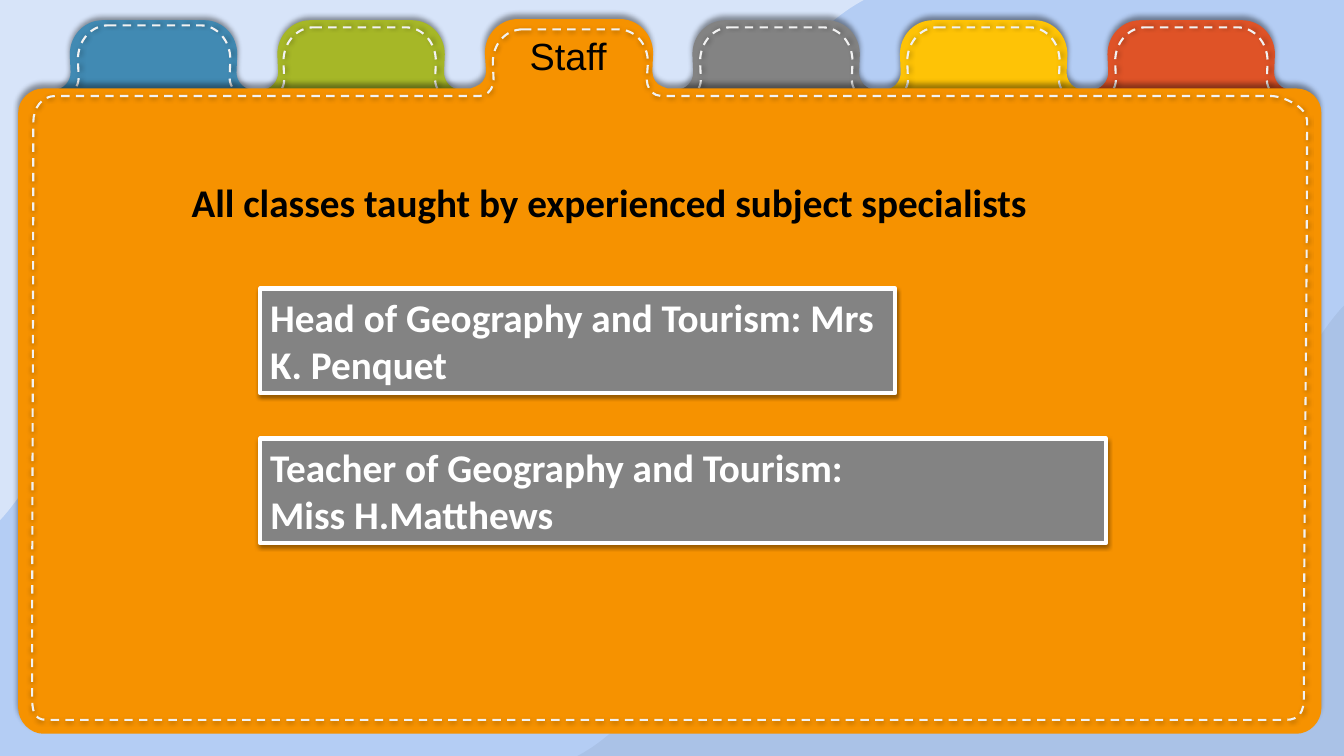
from collections import namedtuple

from lxml import etree
from pptx import Presentation
from pptx import util as u
from pptx.dml.color import RGBColor
from pptx.enum import dml, shapes, text
from pptx.oxml.ns import qn

COLOURS = {
    "sky": "6D9EEB", "white": "FFFFFF", "black": "000000", "stitch": "F2F2F2",
    "blue": "418AB3", "green": "A6B727", "orange": "F69200",
    "grey": "838383", "yellow": "FEC306", "red": "DF5327",
}
Box = namedtuple("Box", "left top width height")
PAGE = Box(0, 0, 33.87, 19.05)

WAVE = [(19.32, 0), (17.65, 1.75, 16.46, 6.5, 14.33, 5.28),
        (12.19, 4.06, 11.43, 2.36, 9.19, 5.97), (6.96, 9.58, 6.25, 5.72, 4.7, 6.63),
        (3.18, 7.52, 1.85, 10.39, 0, 11.35), (19.32, 11.35)]
TAB = [(1.22, 0), (3.78, 0), (4.24, 0, 4.61, 0.38, 4.61, 0.86), (4.59, 1.32),
       (4.59, 1.55, 4.78, 1.75, 5, 1.75), (0, 1.75),
       (0.22, 1.75, 0.41, 1.55, 0.41, 1.32), (0.39, 0.86),
       (0.39, 0.38, 0.76, 0, 1.22, 0)]
FOLDER = [(12.6, 0), (15.16, 0), (15.62, 0, 16, 0.38, 16, 0.86), (15.98, 1.32),
          (15.98, 1.5, 16.08, 1.65, 16.23, 1.7), (16.36, 1.75), (32.21, 1.75),
          (32.56, 1.75, 32.84, 2.03, 32.84, 2.36), (32.84, 17.37),
          (32.84, 17.7, 32.56, 18.01, 32.21, 18.01), (0.63, 18.01),
          (0.3, 18.01, 0, 17.7, 0, 17.37), (0, 2.36),
          (0, 2.03, 0.3, 1.75, 0.63, 1.75), (11.4, 1.75), (11.53, 1.7),
          (11.68, 1.65, 11.79, 1.5, 11.79, 1.32), (11.76, 0.86),
          (11.76, 0.38, 12.14, 0, 12.6, 0)]
FOLDER_STITCH = [(12.37, 0), (14.76, 0), (15.19, 0, 15.52, 0.36, 15.52, 0.84),
                 (15.49, 1.27), (15.49, 1.45, 15.6, 1.6, 15.72, 1.65), (15.85, 1.68),
                 (31.22, 1.68), (31.52, 1.68, 32.13, 1.96, 32.13, 2.29),
                 (32.13, 7.14, 32.05, 12.01, 32.05, 16.84),
                 (32.05, 17.2, 31.93, 17.4, 31.6, 17.4), (0.36, 17.4),
                 (0.03, 17.4, 0, 17.15, 0, 16.79), (0, 11.96, 0.03, 7.14, 0.03, 2.34),
                 (0.03, 1.98, 0.25, 1.68, 0.58, 1.68), (11.28, 1.68), (11.4, 1.65),
                 (11.53, 1.6, 11.63, 1.45, 11.63, 1.27), (11.61, 0.84),
                 (11.61, 0.36, 11.94, 0, 12.37, 0)]


def rgb(name):
    return RGBColor.from_string(COLOURS[name])


def lengths(box):
    return [u.Cm(value) for value in box]


def place_outline(box, outline, turned):
    steps = [list(zip(step[::2], step[1::2])) for step in outline]
    wide = max(step[-1][0] for step in steps)
    high = max(step[-1][1] for step in steps)

    def place(x, y):
        across, down = x / wide, y / high
        if turned:
            across, down = 1 - across, 1 - down
        return u.Cm(box.left + across * box.width), u.Cm(box.top + down * box.height)

    return [[place(x, y) for x, y in step] for step in steps]


def bend(shape, steps):
    segments = list(shape._element.iter(qn("a:lnTo")))
    for segment, step in zip(segments, steps):
        if len(step) == 1:
            continue
        curve = etree.Element(qn("a:cubicBezTo"))
        for x, y in step:
            etree.SubElement(curve, qn("a:pt"), x=str(x - shape.left), y=str(y - shape.top))
        segment.getparent().replace(segment, curve)


def paint(shape, fill=None, alpha=None):
    shape.shadow.inherit = False
    shape.line.fill.background()
    if fill is None:
        shape.fill.background()
        return
    shape.fill.solid()
    shape.fill.fore_color.rgb = rgb(fill)
    if alpha is not None:
        colour = shape._element.spPr.find(qn("a:solidFill"))[0]
        etree.SubElement(colour, qn("a:alpha"), val=str(alpha * 1000))


def set_line(shape, colour, width):
    shape.line.color.rgb = rgb(colour)
    shape.line.width = u.Pt(width)


def cast_shadow(shape, alpha, blur, distance, angle):
    effects = shape._element.spPr.find(qn("a:effectLst"))
    shadow = etree.SubElement(effects, qn("a:outerShdw"), blurRad=str(u.Pt(blur)),
                              dist=str(u.Pt(distance)), dir=str(angle * 60000),
                              algn="ctr", rotWithShape="0")
    colour = etree.SubElement(shadow, qn("a:srgbClr"), val=COLOURS["black"])
    etree.SubElement(colour, qn("a:alpha"), val=str(alpha * 1000))


def add_outline(page, box, outline, fill=None, alpha=None, turned=False):
    steps = place_outline(box, outline, turned)
    builder = page.shapes.build_freeform(*steps[0][0])
    builder.add_line_segments([step[-1] for step in steps[1:]], close=True)
    shape = builder.convert_to_shape()
    bend(shape, steps[1:])
    paint(shape, fill, alpha)
    return shape


def add_stitching(page, box, outline, angle):
    seam = add_outline(page, box, outline)
    set_line(seam, "stitch", 1.5)
    seam.line.dash_style = dml.MSO_LINE.DASH
    cast_shadow(seam, 40, 4, 1.5, angle)


def write(shape, lines, size, font, colour, bold=False, align=text.PP_ALIGN.LEFT):
    frame = shape.text_frame
    frame.word_wrap = True
    for index, line in enumerate(lines):
        para = frame.add_paragraph() if index else frame.paragraphs[0]
        para.alignment = align
        span = para.add_run()
        span.text = line
        span.font.size = u.Pt(size)
        span.font.name = font
        span.font.bold = bold
        span.font.color.rgb = rgb(colour)
    return frame


def draw_backdrop(page, box):
    page.background.fill.solid()
    page.background.fill.fore_color.rgb = rgb("sky")
    veil = page.shapes.add_shape(shapes.MSO_SHAPE.RECTANGLE, *lengths(box))
    paint(veil, "white", 49)
    wide, high = 19.32, 11.35
    corner = Box(box.left + box.width - wide, box.top + box.height - high, wide, high)
    add_outline(page, corner, WAVE, "black", 5)
    add_outline(page, Box(box.left, box.top, 21.77, 13.11), WAVE, "white", 47, turned=True)


def draw_tab(page, box, colour, drop, seam_left, seam_top):
    tab = add_outline(page, box, TAB, colour)
    cast_shadow(tab, 40, 4, drop, 270)
    seam = Box(box.left + seam_left, box.top + seam_top, 4.55, box.height)
    add_stitching(page, seam, TAB, 0)


def draw_tab_row(page, box):
    pitch = 5.23
    tabs = [(5, "red", 3, 0.23, 0.18), (4, "yellow", 3, 0.22, 0.18),
            (3, "grey", 3, 0.23, 0.18), (0, "blue", 2, 0.24, 0.13),
            (1, "green", 2, 0.19, 0.18)]
    for slot, colour, drop, seam_left, seam_top in tabs:
        place = Box(box.left + slot * pitch, box.top, 5, box.height)
        draw_tab(page, place, colour, drop, seam_left, seam_top)


def draw_folder(page, box):
    folder = add_outline(page, box, FOLDER, "orange")
    cast_shadow(folder, 40, 4, 3, 270)
    seam = Box(box.left + 0.35, box.top + 0.26, 32.13, 17.4)
    add_stitching(page, seam, FOLDER_STITCH, 90)
    label = page.shapes.add_textbox(
        *lengths(Box(box.left + 12.16, box.top + 0.28, 3.4, 1.27)))
    frame = write(label, ["Staff"], 27, "Arial", "black", align=text.PP_ALIGN.CENTER)
    frame.vertical_anchor = text.MSO_ANCHOR.MIDDLE
    frame.margin_top = frame.margin_bottom = u.Cm(0.25)


def draw_staff_card(page, box, lines):
    card = page.shapes.add_shape(shapes.MSO_SHAPE.RECTANGLE, *lengths(box))
    paint(card, "grey")
    set_line(card, "white", 3)
    cast_shadow(card, 38, 3.1, 1.6, 90)
    frame = write(card, lines, 28, "Calibri", "white", bold=True)
    frame.vertical_anchor = text.MSO_ANCHOR.TOP
    frame.auto_size = text.MSO_AUTO_SIZE.SHAPE_TO_FIT_TEXT


def draw_staff(page, box):
    cards = [(2.9, 16, ["Head of Geography and Tourism: Mrs K. Penquet"]),
             (6.68, 21.31, ["Teacher of Geography and Tourism:", "Miss H.Matthews"])]
    for down, width, lines in cards:
        draw_staff_card(page, Box(box.left + 1.98, box.top + down, width, 2.64), lines)
    heading = page.shapes.add_textbox(*lengths(Box(box.left, box.top, box.width, 1.45)))
    frame = write(heading, ["All classes taught by experienced subject specialists"],
                  28, "Calibri", "black", bold=True)
    frame.auto_size = text.MSO_AUTO_SIZE.SHAPE_TO_FIT_TEXT


def main():
    deck = Presentation()
    deck.slide_width, deck.slide_height = lengths(PAGE)[2:]
    page = deck.slides.add_slide(deck.slide_layouts[6])
    draw_backdrop(page, PAGE)
    draw_tab_row(page, Box(1.37, 0.51, 31.15, 1.75))
    draw_folder(page, Box(0.46, 0.48, 32.84, 18.01))
    draw_staff(page, Box(4.58, 4.37, 24.69, 9.32))
    deck.save("out.pptx")


if __name__ == "__main__":
    main()
